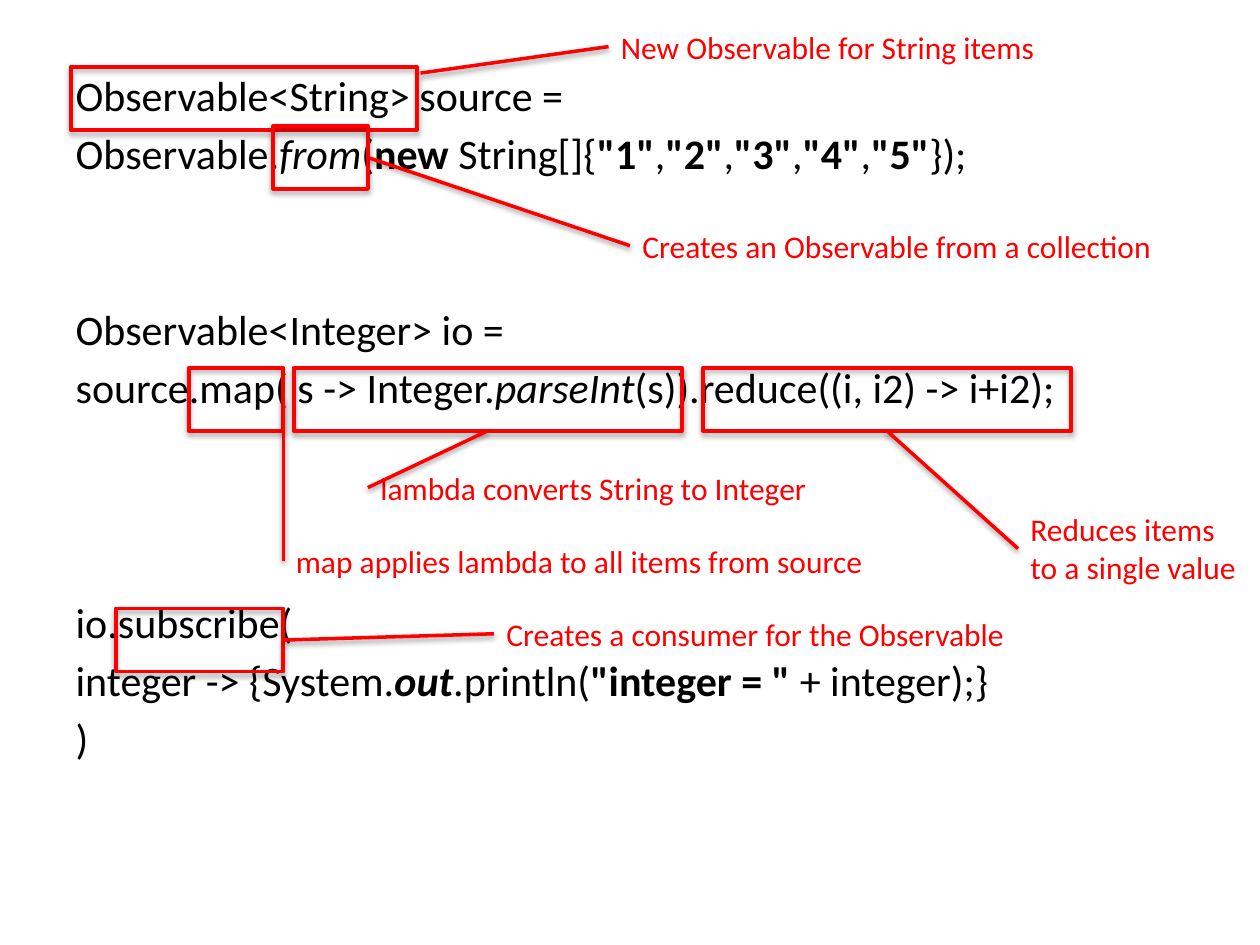
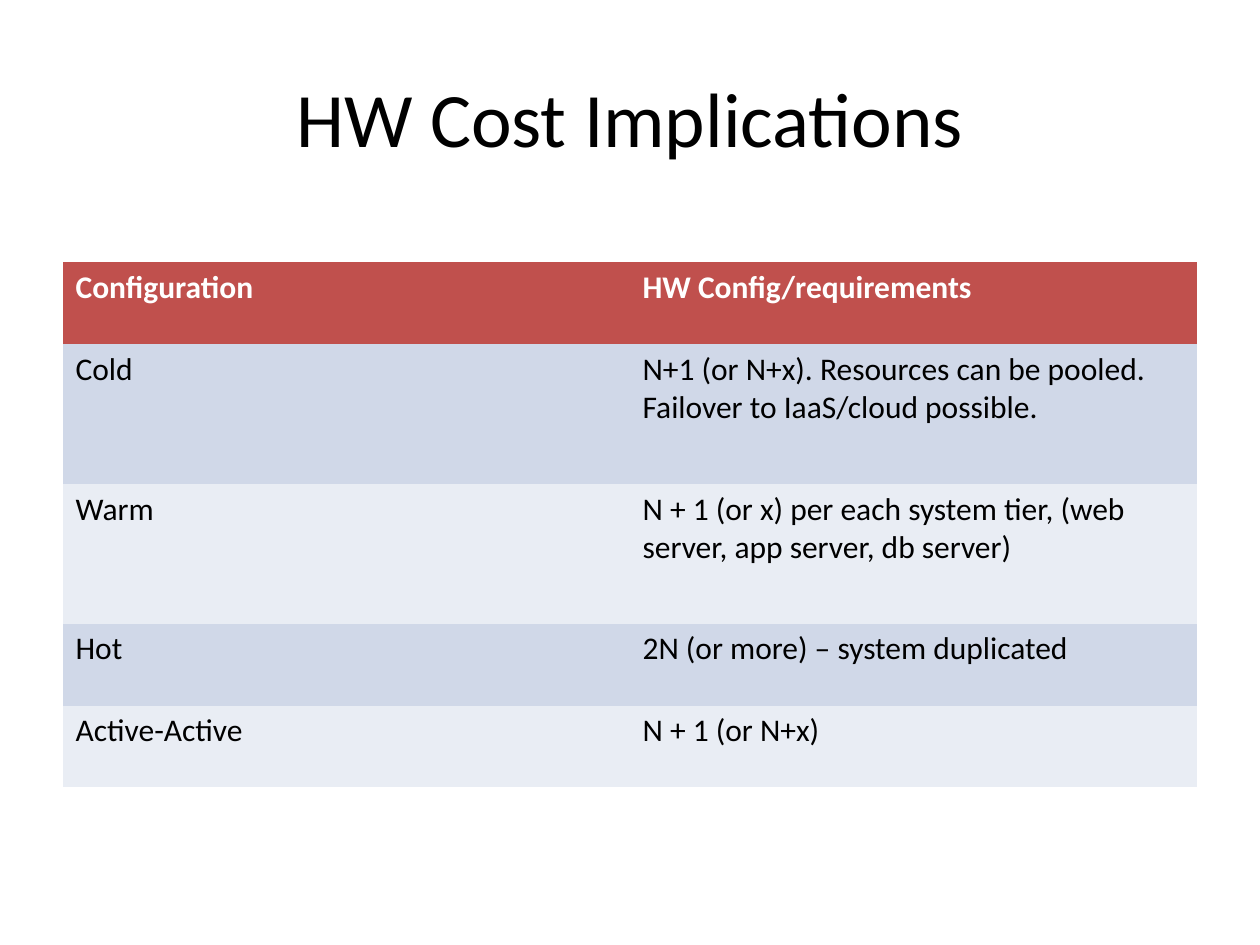
"""Build two slides: an annotated reactive code sample and a hardware cost table."""
from dataclasses import dataclass

from lxml import etree
from pptx import Presentation
from pptx.dml.color import RGBColor
from pptx.enum.shapes import MSO_CONNECTOR, MSO_SHAPE
from pptx.enum.text import MSO_ANCHOR, MSO_AUTO_SIZE, PP_ALIGN
from pptx.oxml.ns import qn
from pptx.util import Inches, Pt

RECTANGLE = MSO_SHAPE.RECTANGLE
STRAIGHT = MSO_CONNECTOR.STRAIGHT
FIT_SHAPE = MSO_AUTO_SIZE.SHAPE_TO_FIT_TEXT
NO_FIT = MSO_AUTO_SIZE.NONE
MIDDLE = MSO_ANCHOR.MIDDLE
CENTER = PP_ALIGN.CENTER

CONTENT_LAYOUT = 1
TITLE_ONLY_LAYOUT = 5
PLAIN_TABLE_STYLE = "{2D5ABB26-0587-4C30-8999-92F81FD0307C}"

COLORS = {
    "text": "000000",
    "callout": "FF0000",
    "header": "C0504D",
    "header_text": "FFFFFF",
    "odd_row": "D0D8E8",
    "even_row": "E9EDF4",
}
FONT = "Calibri"
FORMATS = {
    "title": {"name": FONT, "size": Pt(44)},
    "code": {"name": FONT, "size": Pt(24), "bold": False, "italic": False},
    "label": {"name": FONT, "size": Pt(18)},
    "cell": {"name": FONT, "size": Pt(18), "bold": False},
    "header": {"name": FONT, "size": Pt(18), "bold": True},
}

MARGIN = 0.5
CONTENT_WIDTH = 9
BOX_HEIGHT = 0.5
CODE_GAP = 4.4
CODE_PITCH = 33.7


@dataclass
class CodeLine:
    """A line of code as (text, style letters) runs, with skipped lines above."""
    runs: list
    skipped: int = 0


@dataclass
class Callout:
    """A frame round some code, its label, and where on the frame the line ends."""
    left: float
    top: float
    width: float
    label: str
    label_left: float
    label_top: float
    label_width: float
    label_height: float = 0.4
    anchor: tuple = (1, 0.5)


DIGIT_RUNS = [
    run for digit in "12345" for run in ((f'"{digit}"', "b"), (",", ""))
][:-1]

CODE_LINES = [
    CodeLine([("Observable<String> source =", "")]),
    CodeLine([("Observable.", ""), ("from", "i"), ("(", ""), ("new ", "b"),
              ("String[]{", ""), *DIGIT_RUNS, ("});", "")]),
    CodeLine([("Observable<Integer> io =", "")], skipped=2),
    CodeLine([("source.map( s -> Integer.", ""), ("parseInt", "i"),
              ("(s)).reduce((i, i2) -> i+i2);", "")]),
    CodeLine([("io.subscribe(", "")], skipped=3),
    CodeLine([("integer -> {System.", ""), ("out", "bi"), (".println(", ""),
              ('"integer = " ', "b"), ("+ integer);}", "")]),
    CodeLine([(")", "")]),
]

BOTTOM = (0.5, 1)
CALLOUTS = [
    Callout(0.56, 0.53, 2.75, "New Observable for String items",
            4.83, 0.17, 3.53, anchor=(1.01, 0.1)),
    Callout(2.17, 1, 0.75, "Creates an Observable from a collection",
            5, 1.75, 4.3),
    Callout(2.33, 2.92, 3.08, "lambda converts String to Integer",
            2.92, 3.67, 3.68, anchor=BOTTOM),
    Callout(1.5, 2.92, 0.75, "map applies lambda to all items from source",
            2.25, 4.25, 4.76),
    Callout(0.92, 4.83, 1.33, "Creates a consumer for the Observable",
            3.92, 4.83, 4.21),
    Callout(5.58, 2.92, 2.92, "Reduces items\nto a single value",
            8.08, 4, 1.91, label_height=0.71, anchor=BOTTOM),
]

TABLE_ROWS = [
    (0.65, "Configuration", "HW Config/requirements"),
    (1.11, "Cold", "N+1 (or N+x). Resources can be pooled.\n"
                   "Failover to IaaS/cloud possible."),
    (1.11, "Warm", "N + 1 (or x) per each system tier, "
                   "(web server, app server, db server)"),
    (0.65, "Hot", "2N (or more) – system duplicated"),
    (0.65, "Active-Active", "N + 1 (or N+x)"),
]


def color(name: str) -> RGBColor:
    """Look up a named colour."""
    return RGBColor.from_string(COLORS[name])


def format_font(font, format_name: str, color_name: str, **changes) -> None:
    """Apply a named format, with any changes, and a colour to a font."""
    for attribute, value in {**FORMATS[format_name], **changes}.items():
        setattr(font, attribute, value)
    font.color.rgb = color(color_name)


def fill_text(text_frame, text: str, format_name: str, color_name: str) -> None:
    """Write text, one paragraph a line, in a named format."""
    text_frame.text = text
    for paragraph in text_frame.paragraphs:
        for run in paragraph.runs:
            format_font(run.font, format_name, color_name)


def place(shape, left: float, top: float, width: float, height: float) -> None:
    """Move and size a shape in inches."""
    bounds = {"left": left, "top": top, "width": width, "height": height}
    for attribute, value in bounds.items():
        setattr(shape, attribute, Inches(value))


def style_outline(shape, width: float, distance: int, opacity: int) -> None:
    """Give a shape or connector a red line and a soft shadow below it."""
    shape.line.color.rgb = color("callout")
    shape.line.width = Pt(width)
    effects = etree.SubElement(shape._element.spPr, qn("a:effectLst"))
    shadow = etree.SubElement(
        effects, qn("a:outerShdw"), blurRad="40000", dist=str(distance),
        dir="5400000", rotWithShape="0")
    shade = etree.SubElement(shadow, qn("a:srgbClr"), val=COLORS["text"])
    etree.SubElement(shade, qn("a:alpha"), val=str(opacity * 1000))


def add_callout(slide, callout: Callout) -> None:
    """Draw a frame, its label and the line that joins them."""
    frame = slide.shapes.add_shape(
        RECTANGLE, Inches(callout.left), Inches(callout.top),
        Inches(callout.width), Inches(BOX_HEIGHT))
    frame.fill.background()
    style_outline(frame, 2.25, 23000, 35)

    label = slide.shapes.add_textbox(
        Inches(callout.label_left), Inches(callout.label_top),
        Inches(callout.label_width), Inches(callout.label_height))
    label.text_frame.word_wrap = False
    label.text_frame.auto_size = FIT_SHAPE
    fill_text(label.text_frame, callout.label, "label", "callout")

    across, down = callout.anchor
    line = slide.shapes.add_connector(
        STRAIGHT,
        Inches(callout.label_left),
        Inches(callout.label_top + callout.label_height / 2),
        Inches(callout.left + across * callout.width),
        Inches(callout.top + down * BOX_HEIGHT))
    style_outline(line, 2, 20000, 38)


def add_code_line(paragraph, code_line: CodeLine) -> None:
    """Write one unbulleted line of code with its bold and italic runs."""
    paragraph.space_before = Pt(CODE_GAP + code_line.skipped * CODE_PITCH)
    properties = paragraph._p.get_or_add_pPr()
    properties.set("marL", "0")
    properties.set("indent", "0")
    etree.SubElement(properties, qn("a:buNone"))
    for text, style in code_line.runs:
        run = paragraph.add_run()
        run.text = text
        format_font(run.font, "code", "text",
                    bold="b" in style, italic="i" in style)


def build_code_slide(presentation) -> None:
    """Add the code sample with its callouts."""
    slide = presentation.slides.add_slide(
        presentation.slide_layouts[CONTENT_LAYOUT])
    title = slide.shapes.title._element
    title.getparent().remove(title)
    body = slide.placeholders[1]
    place(body, MARGIN, 0.5, CONTENT_WIDTH, 6.2)
    text_frame = body.text_frame
    text_frame.auto_size = NO_FIT
    for index, code_line in enumerate(CODE_LINES):
        paragraph = text_frame.add_paragraph() if index else text_frame.paragraphs[0]
        add_code_line(paragraph, code_line)
    for callout in CALLOUTS:
        add_callout(slide, callout)


def build_cost_slide(presentation) -> None:
    """Add the titled table of hardware requirements."""
    slide = presentation.slides.add_slide(
        presentation.slide_layouts[TITLE_ONLY_LAYOUT])
    title = slide.shapes.title
    place(title, MARGIN, 0.3, CONTENT_WIDTH, 1.25)
    fill_text(title.text_frame, "HW Cost Implications", "title", "text")
    title.text_frame.vertical_anchor = MIDDLE
    title.text_frame.paragraphs[0].alignment = CENTER

    table = slide.shapes.add_table(
        len(TABLE_ROWS), 2, Inches(MARGIN), Inches(2.08),
        Inches(CONTENT_WIDTH), Inches(sum(row[0] for row in TABLE_ROWS))).table
    table._tbl.tblPr.find(qn("a:tableStyleId")).text = PLAIN_TABLE_STYLE
    for index, (height, *texts) in enumerate(TABLE_ROWS):
        table.rows[index].height = Inches(height)
        if index == 0:
            fill, format_name, text_color = "header", "header", "header_text"
        else:
            fill = "odd_row" if index % 2 else "even_row"
            format_name, text_color = "cell", "text"
        for cell, text in zip(table.rows[index].cells, texts):
            cell.fill.solid()
            cell.fill.fore_color.rgb = color(fill)
            fill_text(cell.text_frame, text, format_name, text_color)


def main() -> None:
    """Build and save the presentation."""
    presentation = Presentation()
    presentation.slide_width = Inches(10)
    presentation.slide_height = Inches(7.5)
    build_code_slide(presentation)
    build_cost_slide(presentation)
    presentation.save("out.pptx")


if __name__ == "__main__":
    main()
